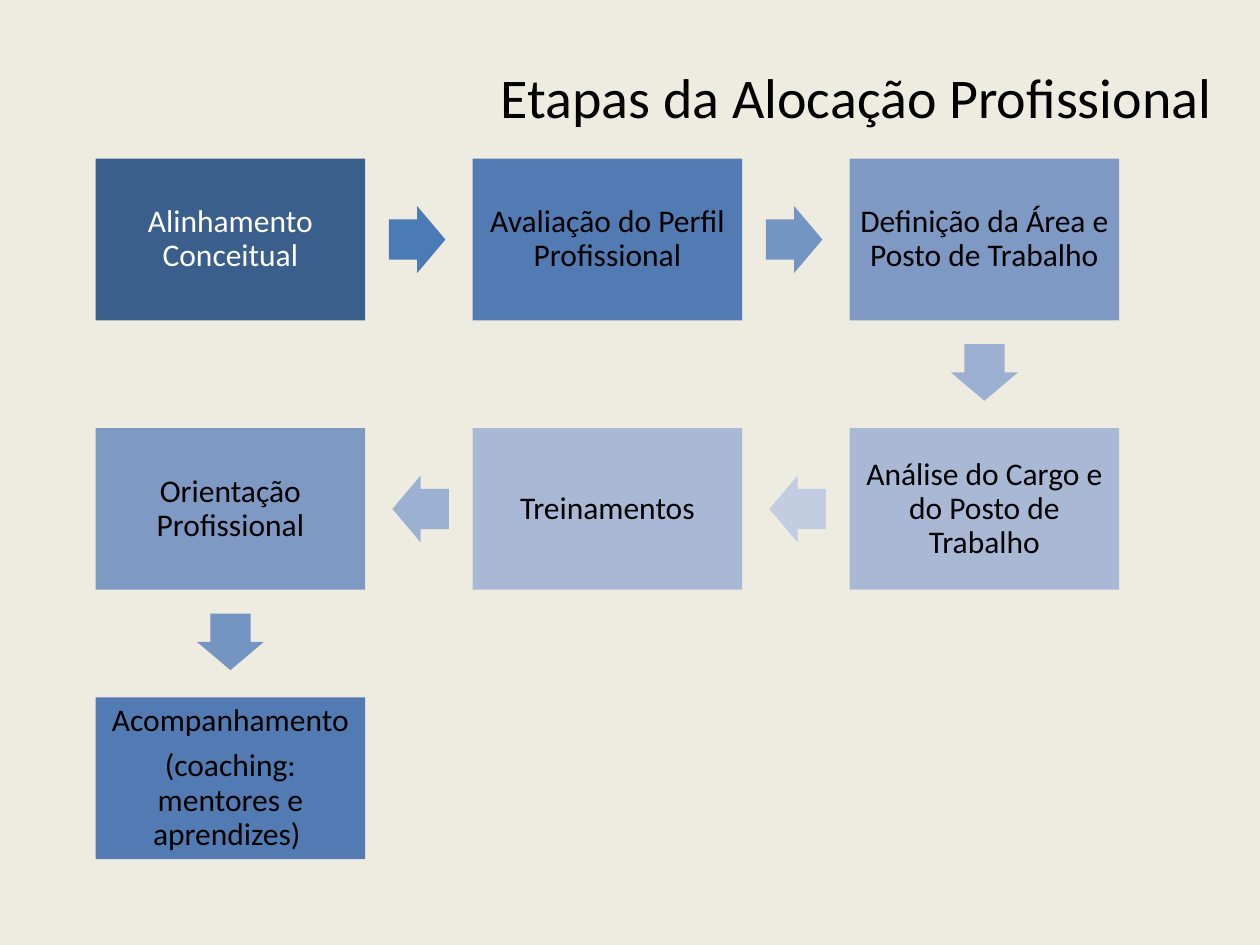
"""Build a slide showing the stages of professional placement as a winding flow."""
import math
from typing import NamedTuple

import pptx
import pptx.dml.color
import pptx.enum.shapes
import pptx.enum.text
import pptx.shapes.autoshape
import pptx.slide
import pptx.util

Cm = pptx.util.Cm
Pt = pptx.util.Pt

FONT = "Calibri"
GRID_LEFT, GRID_TOP = 1.93, 3.2
BOX_WIDTH, BOX_HEIGHT = 5.43, 3.26
COLUMN_PITCH, ROW_PITCH = 7.6, 5.43
ARROW_LENGTH, ARROW_BREADTH = 1.14, 1.35
ARROW_GAP = 0.48


class Stage(NamedTuple):
    """One stage with its grid cell and the colour of the arrow leaving it."""

    text: str
    column: int
    row: int
    fill: str
    arrow_fill: str = ""
    text_color: str = "000000"

    @property
    def center(self) -> tuple[float, float]:
        """Return the centre of the stage box in centimetres."""
        return (
            GRID_LEFT + self.column * COLUMN_PITCH + BOX_WIDTH / 2,
            GRID_TOP + self.row * ROW_PITCH + BOX_HEIGHT / 2,
        )


STAGES = [
    Stage("Alinhamento Conceitual", 0, 0, "3A5F8C", "4B7BB5", "FFFFFF"),
    Stage("Avaliação do Perfil Profissional", 1, 0, "517BB2", "7495C2"),
    Stage("Definição da Área e Posto de Trabalho", 2, 0, "7E99C3", "9CB1D1"),
    Stage("Análise do Cargo e do Posto de Trabalho", 2, 1, "A9B9D5", "C2CDE1"),
    Stage("Treinamentos", 1, 1, "A9B9D5", "9CB1D1"),
    Stage("Orientação Profissional", 0, 1, "7E99C3", "7495C2"),
    Stage("Acompanhamento\n(coaching: mentores e aprendizes) ", 0, 2, "517BB2"),
]


def color(value: str) -> pptx.dml.color.RGBColor:
    """Turn a hex string into a colour."""
    return pptx.dml.color.RGBColor.from_string(value)


def add_filled(
    slide: pptx.slide.Slide,
    kind: pptx.enum.shapes.MSO_SHAPE,
    center: tuple[float, float],
    size: tuple[float, float],
    fill: str,
) -> pptx.shapes.autoshape.Shape:
    """Add a flat shape without outline, placed by its centre."""
    left, top = (middle - extent / 2 for middle, extent in zip(center, size))
    shape = slide.shapes.add_shape(kind, Cm(left), Cm(top), *map(Cm, size))
    shape.shadow.inherit = False
    shape.fill.solid()
    shape.fill.fore_color.rgb = color(fill)
    shape.line.fill.background()
    return shape


def add_stage(slide: pptx.slide.Slide, stage: Stage) -> None:
    """Draw the box of one stage with its text."""
    box = add_filled(slide, pptx.enum.shapes.MSO_SHAPE.RECTANGLE,
                     stage.center, (BOX_WIDTH, BOX_HEIGHT), stage.fill)
    frame = box.text_frame
    frame.word_wrap = True
    frame.vertical_anchor = pptx.enum.text.MSO_ANCHOR.MIDDLE
    frame.margin_left = frame.margin_right = Cm(0.18)
    frame.margin_top = frame.margin_bottom = Cm(0.18)
    frame.text = stage.text
    for para in frame.paragraphs:
        para.alignment = pptx.enum.text.PP_ALIGN.CENTER
        para.line_spacing = 0.9
        para.space_after = Pt(6.3)
        for span in para.runs:
            span.font.name = FONT
            span.font.size = Pt(18)
            span.font.color.rgb = color(stage.text_color)


def add_arrow(slide: pptx.slide.Slide, start: Stage, end: Stage) -> None:
    """Draw the arrow that leaves one stage towards the next."""
    across, down = end.column - start.column, end.row - start.row
    reach = ARROW_GAP + ARROW_LENGTH / 2
    center = (
        start.center[0] + across * (BOX_WIDTH / 2 + reach),
        start.center[1] + down * (BOX_HEIGHT / 2 + reach),
    )
    arrow = add_filled(slide, pptx.enum.shapes.MSO_SHAPE.RIGHT_ARROW,
                       center, (ARROW_LENGTH, ARROW_BREADTH), start.arrow_fill)
    arrow.adjustments[0] = 0.6
    arrow.adjustments[1] = 0.5
    arrow.rotation = math.degrees(math.atan2(down, across))


def set_title(slide: pptx.slide.Slide, text: str) -> None:
    """Place and format the slide title."""
    title = slide.shapes.title
    title.left, title.top = Cm(8.89), Cm(1.12)
    title.width, title.height = Cm(15.8), Cm(1.63)
    title.text_frame.text = text
    title.text_frame.word_wrap = True
    para = title.text_frame.paragraphs[0]
    para.alignment = pptx.enum.text.PP_ALIGN.RIGHT
    span = para.runs[0]
    span.font.name = FONT
    span.font.size = Pt(32)
    span.font.color.rgb = color("000000")


def main() -> None:
    """Build and save the deck."""
    deck = pptx.Presentation()
    deck.slide_width, deck.slide_height = Cm(25.4), Cm(19.05)
    page = deck.slides.add_slide(deck.slide_layouts[5])
    page.background.fill.solid()
    page.background.fill.fore_color.rgb = color("EEECE1")
    set_title(page, "Etapas da Alocação Profissional")
    for stage in STAGES:
        add_stage(page, stage)
    for start, end in zip(STAGES, STAGES[1:]):
        add_arrow(page, start, end)
    deck.save("out.pptx")


if __name__ == "__main__":
    main()
